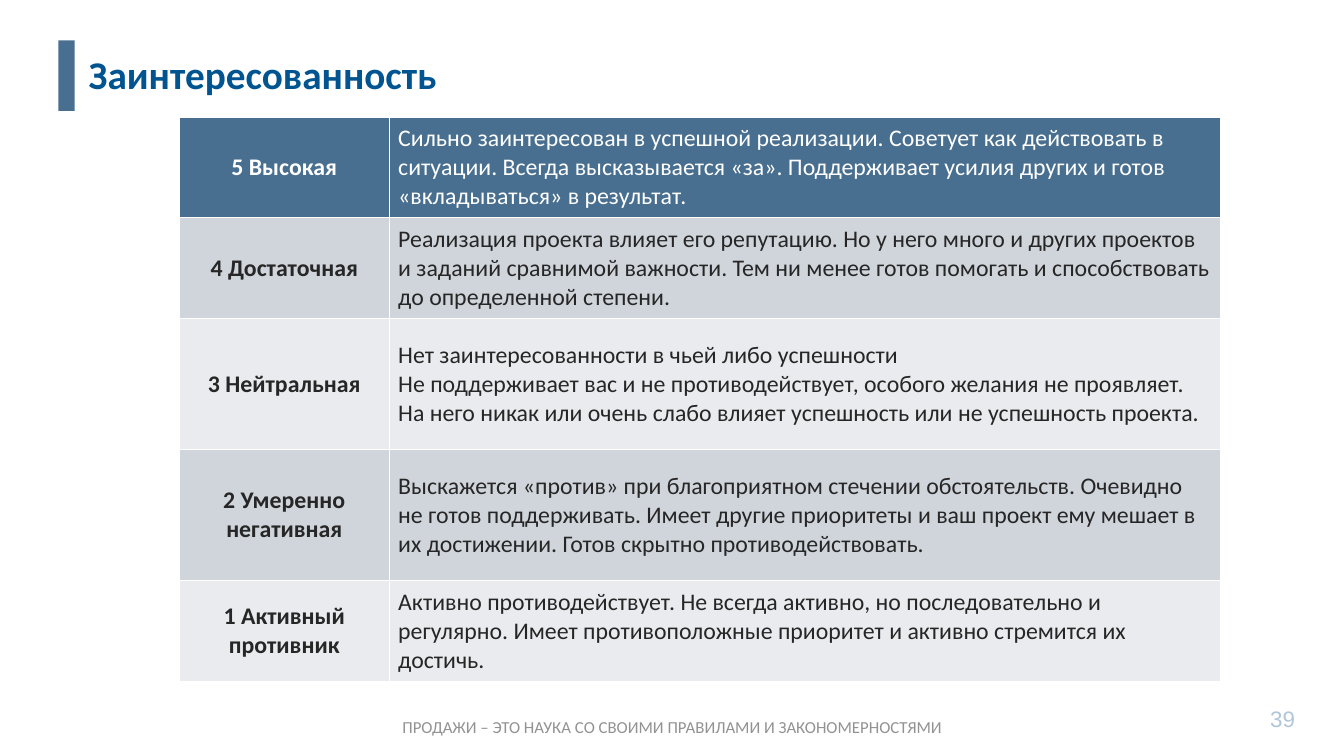
from lxml.etree import SubElement
from pptx import Presentation
from pptx.dml.color import RGBColor
from pptx.enum.shapes import MSO_SHAPE
from pptx.enum.text import MSO_ANCHOR, MSO_AUTO_SIZE, PP_ALIGN
from pptx.oxml.ns import qn
from pptx.util import Inches, Pt

BLUE, WHITE, DARK = "496F90", "FFFFFF", "262626"
BANDS = ("D0D5DB", "E9EBEE")
LEVELS = [
    (1, "5 Высокая", "Сильно заинтересован в успешной реализации. Советует как действовать в "
     "ситуации. Всегда высказывается «за». Поддерживает усилия других и готов "
     "«вкладываться» в результат."),
    (1, "4 Достаточная", "Реализация проекта влияет его репутацию. Но у него много и других "
     "проектов и заданий сравнимой важности. Тем ни менее готов помогать и способствовать "
     "до определенной степени."),
    (1.3, "3 Нейтральная", "Нет заинтересованности в чьей либо успешности\n"
     "Не поддерживает вас и не противодействует, особого желания не проявляет. "
     "На него никак или очень слабо влияет успешность или не успешность проекта."),
    (1.3, "2 Умеренно негативная", "Выскажется «против» при благоприятном стечении "
     "обстоятельств. Очевидно не готов поддерживать. Имеет другие приоритеты и ваш проект "
     "ему мешает в их достижении. Готов скрытно противодействовать."),
    (1, "1 Активный противник", "Активно противодействует. Не всегда активно, но "
     "последовательно и регулярно. Имеет противоположные приоритет и активно стремится "
     "их достичь."),
]


def rgb(color):
    return RGBColor.from_string(color)


class SlideBuilder:
    """Holds the text style and the slide being built."""

    def __init__(self, prs, font="Calibri"):
        self.slide = prs.slides.add_slide(prs.slide_layouts[5])
        self.font = font

    def set_text(self, tf, text, size, color, bold=False, align=PP_ALIGN.LEFT, font=None):
        tf.text = text
        for p in tf.paragraphs:
            p.alignment = align
            p.font.name = font or self.font
            p.font.size = Pt(size)
            p.font.bold = bold
            p.font.color.rgb = rgb(color)

    def title(self, text, left, top, width, height):
        sp = self.slide.shapes.title
        sp.left, sp.top = Inches(left), Inches(top)
        sp.width, sp.height = Inches(width), Inches(height)
        tf = sp.text_frame
        tf.margin_left = tf.margin_top = tf.margin_right = tf.margin_bottom = 0
        tf.vertical_anchor = MSO_ANCHOR.TOP
        tf.auto_size = MSO_AUTO_SIZE.SHAPE_TO_FIT_TEXT
        self.set_text(tf, text, 28, "005490", bold=True)

    def bar(self, left, top, width, height, color):
        sp = self.slide.shapes.add_shape(MSO_SHAPE.RECTANGLE, Inches(left), Inches(top),
                                         Inches(width), Inches(height))
        sp.shadow.inherit = False
        sp.fill.solid()
        sp.fill.fore_color.rgb = rgb(color)
        sp.line.fill.background()

    def label(self, text, left, top, width, height, size, color, wrap=True, font=None,
              anchor=MSO_ANCHOR.TOP):
        tf = self.slide.shapes.add_textbox(Inches(left), Inches(top), Inches(width),
                                           Inches(height)).text_frame
        tf.word_wrap = wrap
        tf.vertical_anchor = anchor
        self.set_text(tf, text, size, color, align=PP_ALIGN.CENTER, font=font)

    def table(self, levels, left, top, widths):
        heights = [height for height, *_ in levels]
        table = self.slide.shapes.add_table(
            len(levels), len(widths), Inches(left), Inches(top),
            Inches(sum(widths)), Inches(sum(heights))).table
        for column, width in zip(table.columns, widths):
            column.width = Inches(width)
        for i, (height, name, description) in enumerate(levels):
            table.rows[i].height = Inches(height)
            fill, color = (BANDS[(i - 1) % 2], DARK) if i else (BLUE, WHITE)
            self.cell(table.cell(i, 0), name, fill, color, True, PP_ALIGN.CENTER)
            self.cell(table.cell(i, 1), description, fill, color, False, PP_ALIGN.LEFT)

    def cell(self, cell, text, fill, color, bold, align):
        cell.vertical_anchor = MSO_ANCHOR.MIDDLE
        cell.margin_left = cell.margin_right = Inches(0.09)
        cell.margin_top = cell.margin_bottom = Inches(0.05)
        self.set_text(cell.text_frame, text, 17, color, bold, align)
        tcPr = cell._tc.get_or_add_tcPr()
        for side in ("a:lnL", "a:lnR", "a:lnT", "a:lnB"):
            ln = SubElement(tcPr, qn(side), w=str(Pt(1)))
            SubElement(SubElement(ln, qn("a:solidFill")), qn("a:srgbClr"), val=WHITE)
        cell.fill.solid()
        cell.fill.fore_color.rgb = rgb(fill)


def main():
    prs = Presentation()
    prs.slide_width, prs.slide_height = Inches(13.33), Inches(7.5)
    s = SlideBuilder(prs)
    s.label("ПРОДАЖИ – ЭТО НАУКА СО СВОИМИ ПРАВИЛАМИ И ЗАКОНОМЕРНОСТЯМИ",
            3.8, 7.06, 5.74, 0.3, 12, "929292", wrap=False)
    s.bar(0.58, 0.4, 0.16, 0.7, BLUE)
    s.title("Заинтересованность", 0.88, 0.5, 5.55, 0.47)
    s.table(LEVELS, 1.78, 1.16, (2.08, 8.25))
    s.label("39", 12.11, 6.93, 1.22, 0.4, 16, "B1C6D8", font="Arial",
            anchor=MSO_ANCHOR.MIDDLE)
    prs.save("out.pptx")


if __name__ == "__main__":
    main()
